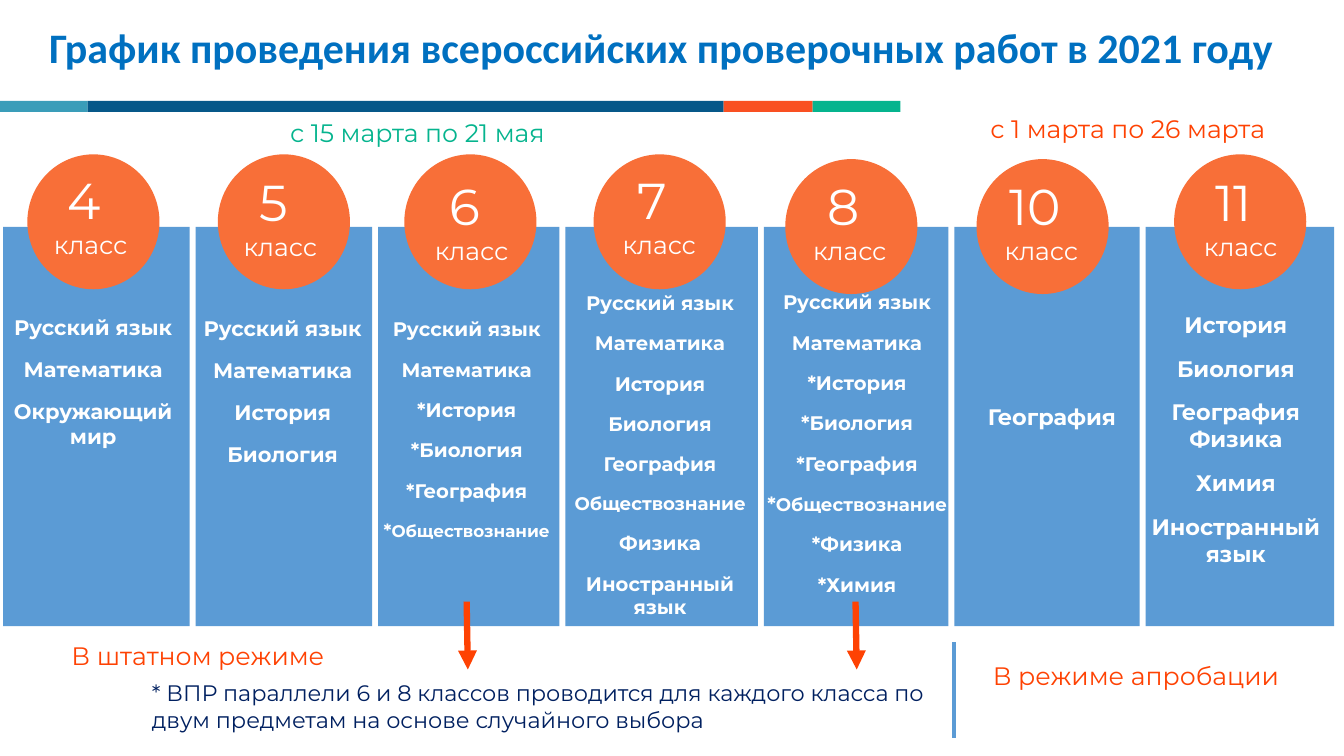
from lxml import etree
from pptx import Presentation
from pptx import util as u
from pptx.dml.color import RGBColor
from pptx.enum import shapes, text
from pptx.oxml.ns import qn

COLORS = {
    "column": "5B9BD5", "circle": "F86F38", "white": "FFFFFF", "title": "0070C0",
    "orange": "FE4203", "green": "05B48E", "navy": "002060",
    "stripe_teal": "3A9DB9", "stripe_blue": "065889", "stripe_orange": "F95022",
}

STRIPES = [("stripe_teal", 2.21), ("stripe_blue", 16.03),
           ("stripe_orange", 2.24), ("green", 2.21)]
STRIPE_TOP, STRIPE_HEIGHT = 2.54, 0.28

COLUMN_LEFT, COLUMN_TOP, COLUMN_HEIGHT, COLUMN_GAP = 0.08, 5.72, 10.06, 0.15
CIRCLE_SIZE = (3.33, 3.4)
LABEL_SIZE = (2.95, 2.57)

GRADES = [
    {"grade": "4", "width": 4.7, "circle": (0.69, 3.89), "label": (0.81, 4.14),
     "box": (-0.15, 7.8, 5, 3.68), "size": 15,
     "subjects": ["Русский язык", "Математика", "Окружающий мир"]},
    {"grade": "5", "width": 4.45, "circle": (5.49, 3.89), "label": (5.59, 4.19),
     "box": (4.24, 7.82, 5.77, 4.11), "size": 15,
     "subjects": ["Русский язык", "Математика", "История", "Биология"]},
    {"grade": "6", "width": 4.57, "circle": (10.19, 3.89), "label": (10.41, 4.29),
     "box": (8.92, 7.87, 5.69, 5.99), "size": 14,
     "subjects": ["Русский язык", "Математика", "*История", "*Биология", "*География",
                  [("*", 13), ("Обществознание", 12)]]},
    {"grade": "7", "width": 4.85, "circle": (14.96, 3.89), "label": (15.14, 4.14),
     "box": (13.79, 7.21, 5.69, 8.64), "size": 14,
     "subjects": ["Русский язык", "Математика", "История", "Биология", "География",
                  [("Обществознание", 13)], "Физика", "Иностранный язык"]},
    {"grade": "8", "width": 4.65, "circle": (19.79, 4.01), "label": (19.94, 4.29),
     "box": (18.97, 7.19, 5.26, 8.03), "size": 14,
     "subjects": ["Русский язык", "Математика", "*История", "*Биология", "*География",
                  [("*", 14), ("Обществознание", 13)], "*Физика", "*Химия"]},
    {"grade": "10", "width": 4.67, "circle": (24.61, 4.01), "label": (24.77, 4.29),
     "box": (24.49, 10.03, 4.04, 0.94), "size": 16,
     "subjects": ["География"]},
    {"grade": "11", "width": 4.75, "circle": (29.59, 3.89), "label": (29.79, 4.19),
     "box": (28.63, 7.72, 5.03, 6.76), "size": 16,
     "subjects": ["История", "Биология", "География Физика", "Химия", "Иностранный язык"]},
]

TITLE = "График проведения всероссийских проверочных работ в 2021 году"
TITLE_BOX = (0.33, 0.43, 32.69, 1.55)
NOTES = [
    ("с 15 марта по 21 мая", (7.06, 2.84, 8.69, 1.02), 18, "green"),
    ("с 1 марта по 26 марта", (24.71, 2.74, 8.69, 1.02), 18, "orange"),
    ("В штатном режиме", (1.55, 16, 8.69, 1.02), 18, "orange"),
    ("В режиме апробации", (24.77, 16.51, 8.69, 1.02), 18, "orange"),
    ("* ВПР параллели 6 и 8 классов проводится для каждого класса по двум предметам "
     "на основе случайного выбора", (3.58, 16.99, 20.4, 1.63), 16, "navy"),
]

DIVIDER = (24.05, 16.18, 24.05, 18.59)
ARROWS = [(11.76, 15.16, 11.79, 16.87), (21.56, 15.16, 21.59, 16.87)]


def color(name):
    return RGBColor.from_string(COLORS[name])


def lengths(values):
    return [u.Cm(value) for value in values]


def add_block(slide, kind, box, fill):
    shape = slide.shapes.add_shape(kind, *lengths(box))
    shape.shadow.inherit = False
    shape.fill.solid()
    shape.fill.fore_color.rgb = color(fill)
    shape.line.fill.background()


def add_text(slide, box, lines, fill, font="Montserrat", bold=False, centered=True, after=0):
    frame = slide.shapes.add_textbox(*lengths(box)).text_frame
    frame.word_wrap = True
    frame.auto_size = text.MSO_AUTO_SIZE.SHAPE_TO_FIT_TEXT
    for index, (content, size) in enumerate(lines):
        paragraph = frame.add_paragraph() if index else frame.paragraphs[0]
        paragraph.alignment = text.PP_ALIGN.CENTER if centered else text.PP_ALIGN.LEFT
        paragraph.space_after = u.Pt(after)
        paragraph.font.name = font
        paragraph.font.size = u.Pt(size)
        paragraph.font.bold = bold
        paragraph.font.color.rgb = color(fill)
        if isinstance(content, str):
            paragraph.add_run().text = content
            continue
        for part, part_size in content:
            run = paragraph.add_run()
            run.text = part
            run.font.size = u.Pt(part_size)


def add_line(slide, ends, stroke, width, arrow=False):
    line = slide.shapes.add_connector(shapes.MSO_CONNECTOR.STRAIGHT, *lengths(ends))
    line.line.color.rgb = color(stroke)
    line.line.width = u.Pt(width)
    if arrow:
        etree.SubElement(line.line._get_or_add_ln(), qn("a:tailEnd"), type="triangle")
    etree.SubElement(line._element.spPr, qn("a:effectLst"))


def main():
    presentation = Presentation()
    presentation.slide_width = u.Cm(33.87)
    presentation.slide_height = u.Cm(19.05)
    slide = presentation.slides.add_slide(presentation.slide_layouts[6])
    rectangle, oval = shapes.MSO_SHAPE.RECTANGLE, shapes.MSO_SHAPE.OVAL

    left = 0
    for fill, width in STRIPES:
        add_block(slide, rectangle, (left, STRIPE_TOP, width, STRIPE_HEIGHT), fill)
        left += width
    add_text(slide, TITLE_BOX, [(TITLE, 30)], "title", font="Calibri", bold=True)

    left = COLUMN_LEFT
    for grade in GRADES:
        add_block(slide, rectangle, (left, COLUMN_TOP, grade["width"], COLUMN_HEIGHT), "column")
        left += grade["width"] + COLUMN_GAP

    for grade in GRADES:
        add_block(slide, oval, grade["circle"] + CIRCLE_SIZE, "circle")
        add_text(slide, grade["label"] + LABEL_SIZE,
                 [(grade["grade"] + " ", 36), ("класс", 18)], "white")
        add_text(slide, grade["box"], [(subject, grade["size"]) for subject in grade["subjects"]],
                 "white", bold=True, after=12)

    for content, box, size, fill in NOTES:
        add_text(slide, box, [(content, size)], fill, centered=False)

    add_line(slide, DIVIDER, "column", 3)
    for ends in ARROWS:
        add_line(slide, ends, "orange", 4.5, arrow=True)

    presentation.save("out.pptx")


if __name__ == "__main__":
    main()
